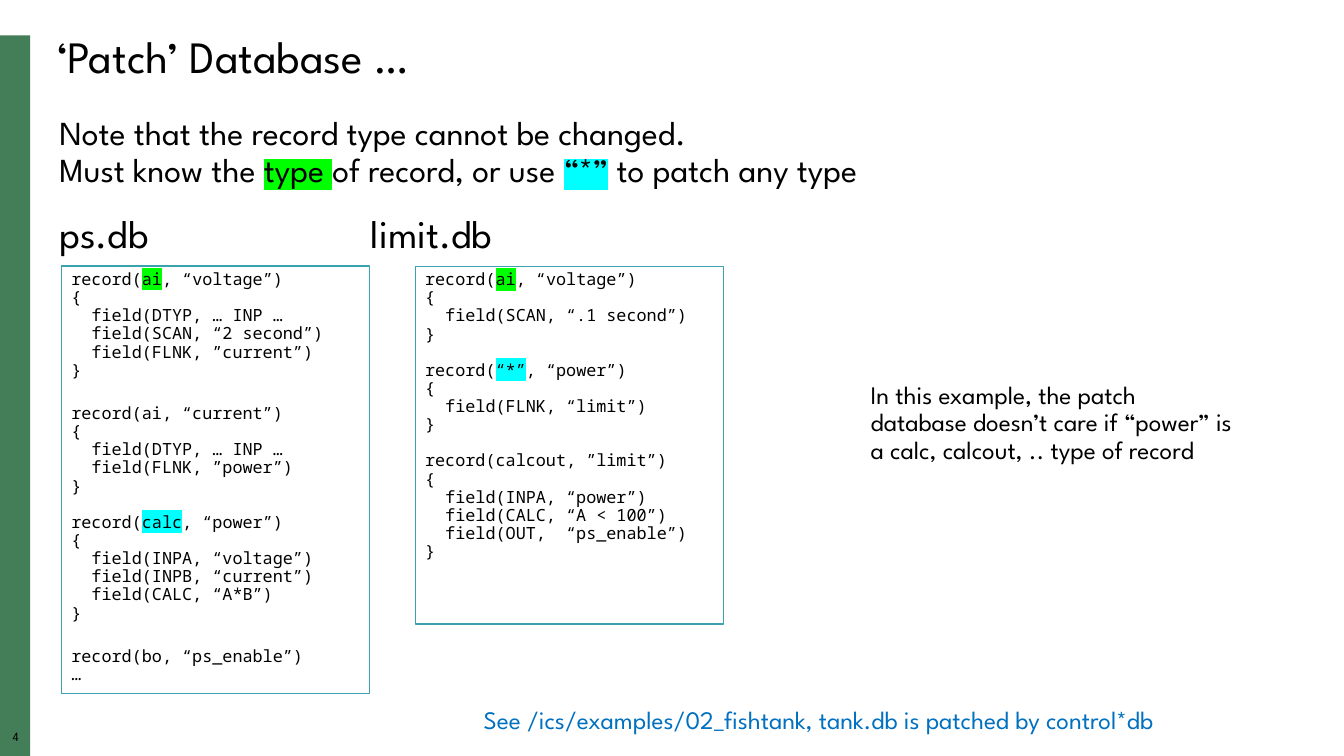
"""Build the slide on patching record types in a database."""
from copy import deepcopy
from dataclasses import dataclass
from typing import NamedTuple, Optional

from lxml import etree
from pptx import Presentation
from pptx import util as u
from pptx.dml.color import RGBColor
from pptx.enum import shapes, text
from pptx.oxml.ns import qn


@dataclass(frozen=True)
class Theme:
    """Hold the colours, fonts and type sizes."""
    ink: str = "000000"
    paper: str = "FFFFFF"
    sidebar: str = "447E59"
    frame: str = "3BA2AD"
    link: str = "0070C0"
    green: str = "00FF00"
    cyan: str = "00FFFF"
    sans: str = "League Spartan"
    mono: str = "Noto Sans Mono"
    title: float = 32
    heading: float = 28
    body: float = 24
    note: float = 18
    code: float = 12
    number: float = 9
    line_spacing: float = 0.9
    gap: float = 18


THEME = Theme()


class Box(NamedTuple):
    """Give a place on the slide in points."""
    left: float
    top: float
    width: float
    height: float


class Span(NamedTuple):
    """Give a piece of text and its highlight."""
    text: str
    highlight: Optional[str] = None


@dataclass(frozen=True)
class Listing:
    """Describe a framed code listing."""
    box: Box
    paragraphs: list[list[Span]]


@dataclass(frozen=True)
class Label:
    """Describe a plain line of text."""
    box: Box
    words: str
    size: float
    color: str = THEME.ink


LABELS = [
    Label(Box(33.84, 21.6, 900, 42.5), "‘Patch’ Database …", THEME.title),
    Label(Box(614.9, 270, 273.6, 85.7),
          "In this example, the patch database doesn’t care if “power” is "
          "a calc, calcout, .. type of record", THEME.note),
    Label(Box(338.4, 501.8, 596.9, 26.6),
          "See /ics/examples/02_fishtank, tank.db is patched by control*db",
          THEME.note, THEME.link),
]

BODY_BOX = Box(35.3, 79.9, 762.5, 115.2)
LIMIT_TAB = 222.6
BODY = [
    Span("Note that the record type cannot be changed.\nMust know the "),
    Span("type ", THEME.green),
    Span("of record, or use "),
    Span("“*”", THEME.cyan),
    Span(" to patch any type"),
]

LISTINGS = [
    Listing(Box(43.9, 190.1, 220.3, 305.3), [
        [Span("record("), Span("ai", THEME.green), Span(""", “voltage”)
{
  field(DTYP, … INP …
  field(SCAN, “2 second”)
  field(FLNK, ”current”)
}""")],
        [Span("""record(ai, “current”)
{
  field(DTYP, … INP …
  field(FLNK, ”power”)
}

record("""), Span("calc", THEME.cyan), Span(""", “power”)
{
  field(INPA, “voltage”)
  field(INPB, “current”)
  field(CALC, “A*B”)
}""")],
        [Span("record(bo, “ps_enable”)\n…")],
    ]),
    Listing(Box(296.6, 190.1, 220.3, 255.6), [
        [Span("record("), Span("ai", THEME.green), Span(""", “voltage”)
{
  field(SCAN, “.1 second”)
}

record("""), Span("“*”", THEME.cyan), Span(""", “power”)
{
  field(FLNK, “limit”)
}

record(calcout, ”limit”)
{
  field(INPA, “power”)
  field(CALC, “A < 100”)
  field(OUT,  “ps_enable”)
}""")],
    ]),
]


def points(box: Box) -> list[u.Length]:
    """Turn a box into lengths."""
    return [u.Pt(value) for value in box]


def add_run(paragraph, words: str, *, size: float, font: str, color: str,
            highlight: Optional[str]):
    """Add one formatted run and return it."""
    run = paragraph.add_run()
    run.text = words
    run.font.size = u.Pt(size)
    run.font.name = font
    run.font.color.rgb = RGBColor.from_string(color)
    if highlight:
        mark = etree.Element(qn("a:highlight"))
        etree.SubElement(mark, qn("a:srgbClr"), val=highlight)
        run.font._element.find(qn("a:solidFill")).addnext(mark)
    return run


def write(paragraph, spans: list[Span], *, size: float, font: str = THEME.sans,
          color: str = THEME.ink, before: float = 0, tab: float = 0,
          align=text.PP_ALIGN.LEFT) -> None:
    """Fill a paragraph with formatted spans and line breaks."""
    if tab:
        tabs = etree.SubElement(paragraph._p.get_or_add_pPr(), qn("a:tabLst"))
        etree.SubElement(tabs, qn("a:tab"), pos=str(u.Pt(tab)), algn="l")
    paragraph.alignment = align
    paragraph.line_spacing = THEME.line_spacing
    paragraph.space_before = u.Pt(before)
    run = None
    for span in spans:
        for index, line in enumerate(span.text.split("\n")):
            if index:
                paragraph.add_line_break()
                paragraph._p[-1].append(deepcopy(run.font._element))
            if line:
                run = add_run(paragraph, line, size=size, font=font,
                              color=color, highlight=span.highlight)


def add_text_frame(slide, box: Box):
    """Add a wrapping text box and return its frame."""
    frame = slide.shapes.add_textbox(*points(box)).text_frame
    frame.word_wrap = True
    return frame


def add_rectangle(slide, box: Box, fill: str, line: Optional[str] = None):
    """Add a flat rectangle and return it."""
    shape = slide.shapes.add_shape(shapes.MSO_SHAPE.RECTANGLE, *points(box))
    shape.shadow.inherit = False
    shape.fill.solid()
    shape.fill.fore_color.rgb = RGBColor.from_string(fill)
    if line:
        shape.line.color.rgb = RGBColor.from_string(line)
        shape.line.width = u.Pt(0.85)
    else:
        shape.line.fill.background()
    return shape


def add_listing(slide, listing: Listing) -> None:
    """Add a framed code listing."""
    frame = add_rectangle(slide, listing.box, THEME.paper, THEME.frame).text_frame
    frame.word_wrap = True
    frame.vertical_anchor = text.MSO_ANCHOR.TOP
    for index, spans in enumerate(listing.paragraphs):
        paragraph = frame.add_paragraph() if index else frame.paragraphs[0]
        write(paragraph, spans, size=THEME.code, font=THEME.mono,
              before=THEME.gap if index else 0)


def main() -> None:
    """Build and save the slide."""
    presentation = Presentation()
    presentation.slide_width, presentation.slide_height = u.Pt(960), u.Pt(540)
    slide = presentation.slides.add_slide(presentation.slide_layouts[6])
    add_rectangle(slide, Box(0, 25.2, 21.6, 514.8), THEME.sidebar)
    number = add_text_frame(slide, Box(0, 522, 22.3, 12.2))
    number.margin_left = number.margin_right = u.Pt(0)
    number.margin_top = number.margin_bottom = u.Pt(0)
    write(number.paragraphs[0], [Span("4")], size=THEME.number,
          align=text.PP_ALIGN.CENTER)
    for label in LABELS:
        write(add_text_frame(slide, label.box).paragraphs[0],
              [Span(label.words)], size=label.size, color=label.color)
    body = add_text_frame(slide, BODY_BOX)
    write(body.paragraphs[0], BODY, size=THEME.body)
    write(body.add_paragraph(), [Span("ps.db\tlimit.db")], size=THEME.heading,
          before=THEME.gap, tab=LIMIT_TAB)
    for listing in LISTINGS:
        add_listing(slide, listing)
    presentation.save("out.pptx")


if __name__ == "__main__":
    main()
